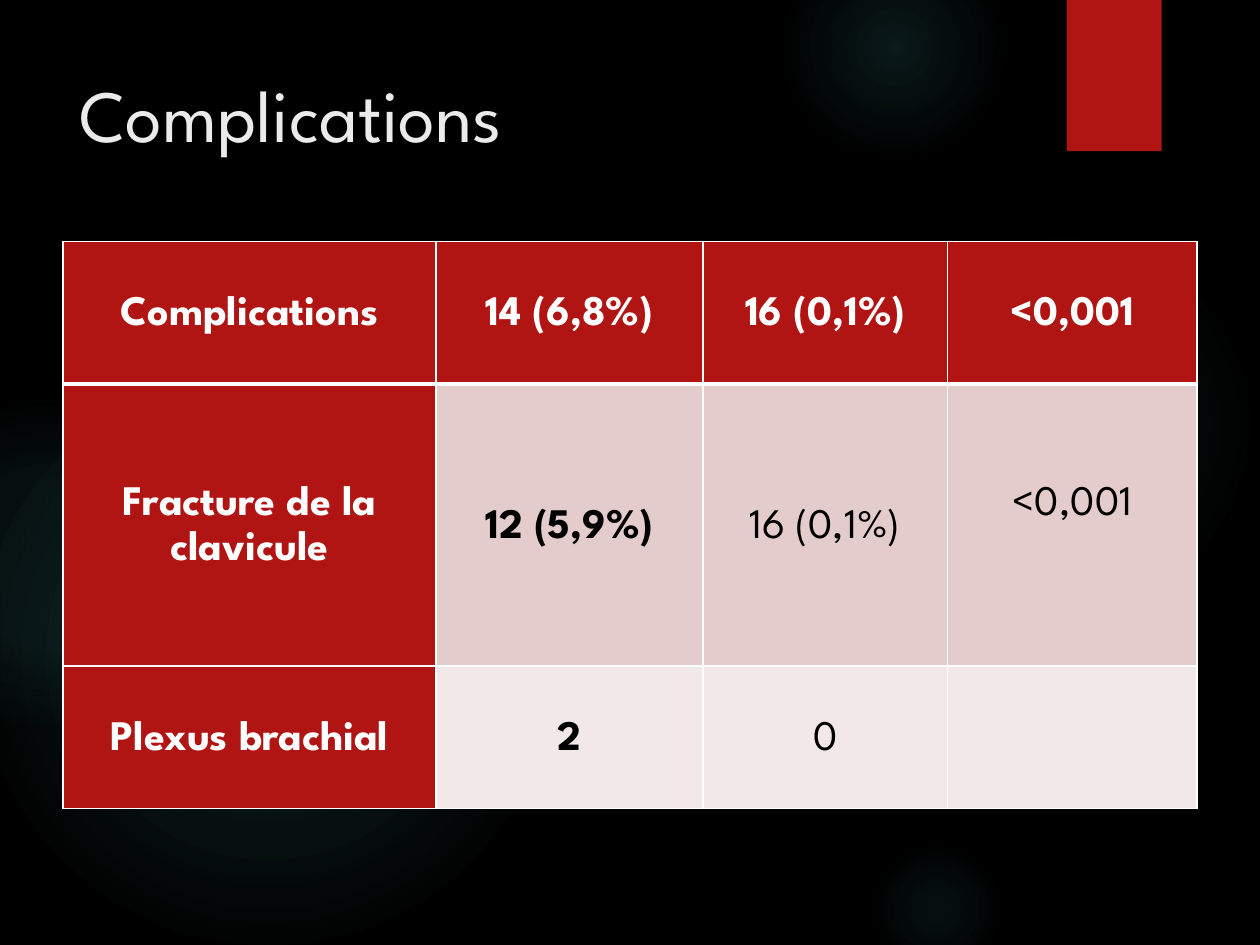
from dataclasses import dataclass

from lxml import etree
from pptx import Presentation
from pptx.dml.color import RGBColor
from pptx.enum.shapes import MSO_SHAPE
from pptx.enum.text import MSO_ANCHOR, MSO_AUTO_SIZE, PP_ALIGN
from pptx.oxml import parse_xml
from pptx.oxml.ns import qn
from pptx.util import Cm, Pt

OVAL, RECT = MSO_SHAPE.OVAL, MSO_SHAPE.RECTANGLE
TOP, MIDDLE = MSO_ANCHOR.TOP, MSO_ANCHOR.MIDDLE
LEFT, CENTER = PP_ALIGN.LEFT, PP_ALIGN.CENTER
NO_FIT = MSO_AUTO_SIZE.NONE

BLACK = RGBColor(0x00, 0x00, 0x00)
WHITE = RGBColor(0xFF, 0xFF, 0xFF)
RED = RGBColor(0xB0, 0x15, 0x13)
TEAL = RGBColor(0x50, 0xB9, 0xC1)
PALE = RGBColor(0xEB, 0xEB, 0xEB)
PINK = RGBColor(0xE4, 0xCC, 0xCC)
LIGHT_PINK = RGBColor(0xF2, 0xE8, 0xE7)

FONT = "League Spartan"
NS = "http://schemas.openxmlformats.org/drawingml/2006/main"


@dataclass
class Glow:
    left: float
    top: float
    size: float
    center_alpha: int
    mid_alpha: int
    edge: int


@dataclass
class Row:
    height: float
    fill: RGBColor
    texts: tuple[str, ...]


GLOWS = [
    Glow(17.5, 4.65, 7.82, 7, 6, 69),
    Glow(15.8, -1.27, 4.45, 14, 7, 73),
    Glow(17.5, 16.94, 2.74, 9, 5, 66),
    Glow(-0.43, 7.42, 11.63, 11, 10, 75),
    Glow(-2.34, 8.05, 6.55, 8, 8, 72),
]
COL_WIDTHS = [7.52, 5.38, 4.93, 5.03]
ROWS = [
    Row(2.87, RED, ("Complications", "14 (6,8%)", "16 (0,1%)", "<0,001")),
    Row(5.69, PINK, ("Fracture de la clavicule", "12 (5,9%)", "16 (0,1%)", "<0,001")),
    Row(2.87, LIGHT_PINK, ("Plexus brachial", "2", "0", "")),
]


def write(tf, text: str, *, size: float, color: RGBColor, bold: bool = False,
          align=LEFT, spacing: float = 1.0) -> None:
    p = tf.paragraphs[0]
    p.alignment = align
    p.line_spacing = spacing
    r = p.add_run()
    r.text = text
    r.font.name = FONT
    r.font.size = Pt(size)
    r.font.bold = bold
    r.font.color.rgb = color


def add_glow(s, glow: Glow) -> None:
    sp = s.shapes.add_shape(OVAL, Cm(glow.left), Cm(glow.top), Cm(glow.size), Cm(glow.size))
    sp.shadow.inherit = False
    sp.line.fill.background()
    stops = "".join(
        f'<a:gs pos="{pos * 1000}"><a:srgbClr val="{TEAL}">'
        f'<a:alpha val="{alpha * 1000}"/></a:srgbClr></a:gs>'
        for pos, alpha in ((0, glow.center_alpha), (36, glow.mid_alpha), (glow.edge, 0))
    )
    grad = parse_xml(
        f'<a:gradFill xmlns:a="{NS}"><a:gsLst>{stops}</a:gsLst><a:path path="circle">'
        '<a:fillToRect l="50000" t="50000" r="50000" b="50000"/></a:path></a:gradFill>'
    )
    sp._element.spPr.find(qn("a:prstGeom")).addnext(grad)


def set_borders(cell, top: float, bottom: float) -> None:
    tc_pr = cell._tc.get_or_add_tcPr()
    for side, width in (("L", 1), ("R", 1), ("T", top), ("B", bottom)):
        ln = etree.SubElement(tc_pr, qn(f"a:ln{side}"), w=str(Pt(width)))
        fill = etree.SubElement(ln, qn("a:solidFill"))
        etree.SubElement(fill, qn("a:srgbClr"), val=str(WHITE))


def add_table(s, rows: list[Row]) -> None:
    frame = s.shapes.add_table(len(rows), len(COL_WIDTHS), Cm(1.27), Cm(4.87),
                               Cm(sum(COL_WIDTHS)), Cm(sum(row.height for row in rows)))
    table = frame.table
    for col, width in zip(table.columns, COL_WIDTHS):
        col.width = Cm(width)
    for i, row in enumerate(rows):
        table.rows[i].height = Cm(row.height)
        for j, text in enumerate(row.texts):
            cell = table.cell(i, j)
            heading = i == 0 or j == 0
            set_borders(cell, 3 if i == 1 else 1, 3 if i == 0 else 1)
            cell.fill.solid()
            cell.fill.fore_color.rgb = RED if heading else row.fill
            cell.vertical_anchor = MIDDLE
            cell.margin_left = cell.margin_right = Cm(0.18)
            cell.margin_top = cell.margin_bottom = Cm(0.03)
            if text:
                write(cell.text_frame, text, size=24, color=WHITE if heading else BLACK,
                      bold=heading or j == 1, align=CENTER, spacing=1.15)
    table.cell(1, 3).margin_bottom = Cm(0.95)


def add_title(s, text: str) -> None:
    title = s.shapes.title
    title.left, title.top, title.width, title.height = Cm(1.35), Cm(1.27), Cm(19.6), Cm(3.88)
    tf = title.text_frame
    tf.word_wrap = True
    tf.auto_size = NO_FIT
    tf.vertical_anchor = TOP
    write(tf, text, size=42, color=PALE)
    s.shapes._spTree.append(title._element)


def main() -> None:
    prs = Presentation()
    prs.slide_width, prs.slide_height = Cm(25.4), Cm(19.05)
    s = prs.slides.add_slide(prs.slide_layouts[5])
    s.background.fill.solid()
    s.background.fill.fore_color.rgb = BLACK

    for glow in GLOWS:
        add_glow(s, glow)

    ribbon = s.shapes.add_shape(RECT, Cm(21.51), Cm(0), Cm(1.91), Cm(3.05))
    ribbon.shadow.inherit = False
    ribbon.fill.solid()
    ribbon.fill.fore_color.rgb = RED
    ribbon.line.fill.background()

    add_title(s, "Complications")
    add_table(s, ROWS)
    prs.save("out.pptx")


if __name__ == "__main__":
    main()
